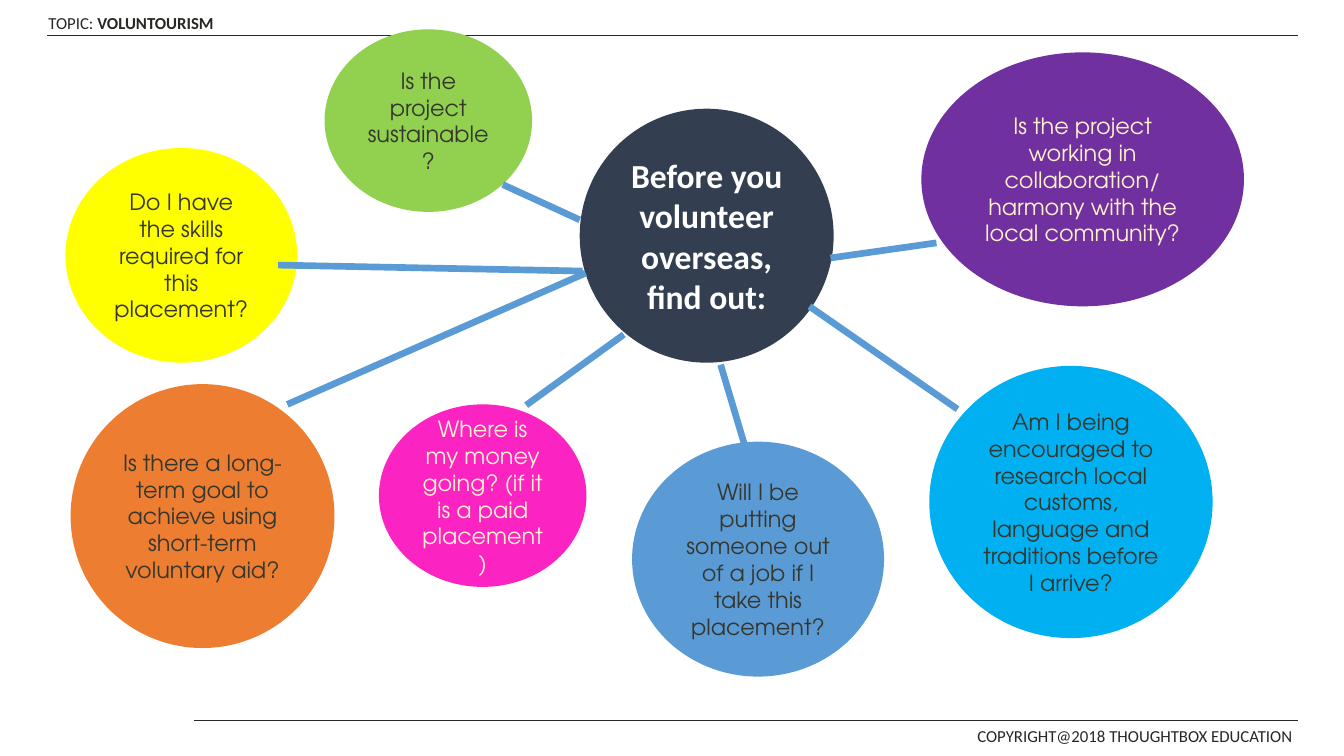
from lxml.etree import SubElement
from pptx import Presentation
from pptx.dml.color import RGBColor
from pptx.enum.shapes import MSO_CONNECTOR, MSO_SHAPE
from pptx.enum.text import MSO_ANCHOR, MSO_AUTO_SIZE, PP_ALIGN
from pptx.oxml.ns import qn
from pptx.util import Cm, Pt

INK = RGBColor(0x25, 0x28, 0x23)
DARK = RGBColor(0x35, 0x37, 0x2F)
CREAM = RGBColor(0xFF, 0xF2, 0xCC)
WHITE = RGBColor(0xFF, 0xFF, 0xFF)
NAVY = RGBColor(0x33, 0x3F, 0x50)
GREEN = RGBColor(0x92, 0xD0, 0x50)
PURPLE = RGBColor(0x70, 0x30, 0xA0)
SKY = RGBColor(0x00, 0xB0, 0xF0)
ORANGE = RGBColor(0xED, 0x7D, 0x31)
YELLOW = RGBColor(0xFF, 0xFF, 0x00)
BLUE = RGBColor(0x5B, 0x9B, 0xD5)
PINK = RGBColor(0xFB, 0x23, 0xC2)
HEAD_FONT, BODY_FONT = "Calibri", "TeX Gyre Adventor"

# Content: all lengths in cm
TITLE = "Before you volunteer overseas, find out:"
HUB = (14.61, 2.74, 6.4, 6.4)
# question, bubble (left, top, width, height), fill, text colour, spoke (x1, y1, x2, y2)
QUESTIONS = [
    ("Is the project sustainable?",
     (8.18, 0.74, 5.23, 4.6), GREEN, DARK, (14.61, 5.54, 12.67, 4.65)),
    ("Is the project working in collaboration/ harmony with the local community?",
     (23.22, 1.32, 8.13, 6.4), PURPLE, CREAM, (20.93, 6.5, 23.6, 6.12)),
    ("Am I being encouraged to research local customs, language and traditions before I arrive?",
     (23.42, 9.22, 7.14, 6.86), SKY, DARK, (20.4, 7.72, 24.13, 10.31)),
    ("Is there a long-term goal to achieve using short-term voluntary aid?",
     (1.78, 9.68, 6.65, 6.65), ORANGE, DARK, (14.76, 6.88, 7.24, 10.19)),
    ("Do I have the skills required for this placement?",
     (1.65, 3.73, 5.84, 5.41), YELLOW, DARK, (14.68, 6.83, 7.01, 6.68)),
    ("Will I be putting someone out of a job if I take this placement?",
     (15.93, 11.13, 6.35, 5.92), BLUE, DARK, (18.16, 9.19, 18.77, 11.23)),
    ("Where is my money going? (if it is a paid placement)",
     (9.55, 10.19, 5.23, 4.6), PINK, CREAM, (15.72, 8.43, 13.26, 10.21)),
]
# runs (text, bold), box
MARGIN_NOTES = [
    ([("TOPIC: ", False), ("VOLUNTOURISM", True)], (0.97, 0.2, 4.85, 0.77)),
    ([("COPYRIGHT@2018 THOUGHTBOX EDUCATION", False)], (24.38, 18.16, 8.64, 0.78)),
]
RULES = [(1.19, 0.89, 32.72, 0.89), (4.88, 18.16, 32.72, 18.16)]


def lengths(values):
    return [Cm(value) for value in values]


def add_span(para, text, font, size, color, bold=False):
    span = para.add_run()
    span.text = text
    span.font.name, span.font.size, span.font.bold = font, Pt(size), bold
    span.font.color.rgb = color


def add_line(page, ends, color, width):
    line = page.shapes.add_connector(MSO_CONNECTOR.STRAIGHT, *lengths(ends))
    line.line.color.rgb, line.line.width = color, Pt(width)
    SubElement(line._element.spPr, qn("a:effectLst"))


def add_bubble(page, place, fill):
    bubble = page.shapes.add_shape(MSO_SHAPE.OVAL, *lengths(place))
    bubble.shadow.inherit = False
    bubble.fill.solid()
    bubble.fill.fore_color.rgb = fill
    bubble.line.fill.background()
    return bubble


def write_centred(box, text, font, size, color, bold=False):
    frame = box.text_frame
    frame.word_wrap, frame.vertical_anchor = True, MSO_ANCHOR.MIDDLE
    para = frame.paragraphs[0]
    para.alignment = PP_ALIGN.CENTER
    add_span(para, text, font, size, color, bold)


def main():
    deck = Presentation()
    deck.slide_width, deck.slide_height = Cm(33.87), Cm(19.05)
    page = deck.slides.add_slide(deck.slide_layouts[5])

    # Header and footer
    for spans, place in MARGIN_NOTES:
        box = page.shapes.add_textbox(*lengths(place))
        box.text_frame.word_wrap = False
        for text, bold in spans:
            add_span(box.text_frame.paragraphs[0], text, HEAD_FONT, 12, INK, bold)
    for ends in RULES:
        add_line(page, ends, INK, 1)

    # Hub, with the title in the square inscribed in its circle
    add_bubble(page, HUB, NAVY)
    left, top, width, height = HUB
    inset = (1 - 0.5 ** 0.5) / 2
    title = page.shapes.title
    title.left, title.top, title.width, title.height = lengths(
        (left + width * inset, top + height * inset,
         width * (1 - 2 * inset), height * (1 - 2 * inset)))
    write_centred(title, TITLE, HEAD_FONT, 24, WHITE, True)
    title.text_frame.auto_size = MSO_AUTO_SIZE.NONE
    page.shapes._spTree.append(title._element)

    # Question bubbles, then the spokes on top
    for question, place, fill, color, _ in QUESTIONS:
        write_centred(add_bubble(page, place, fill), question, BODY_FONT, 16, color)
    for *_, spoke in QUESTIONS:
        add_line(page, spoke, BLUE, 4.75)

    deck.save("out.pptx")


if __name__ == "__main__":
    main()
